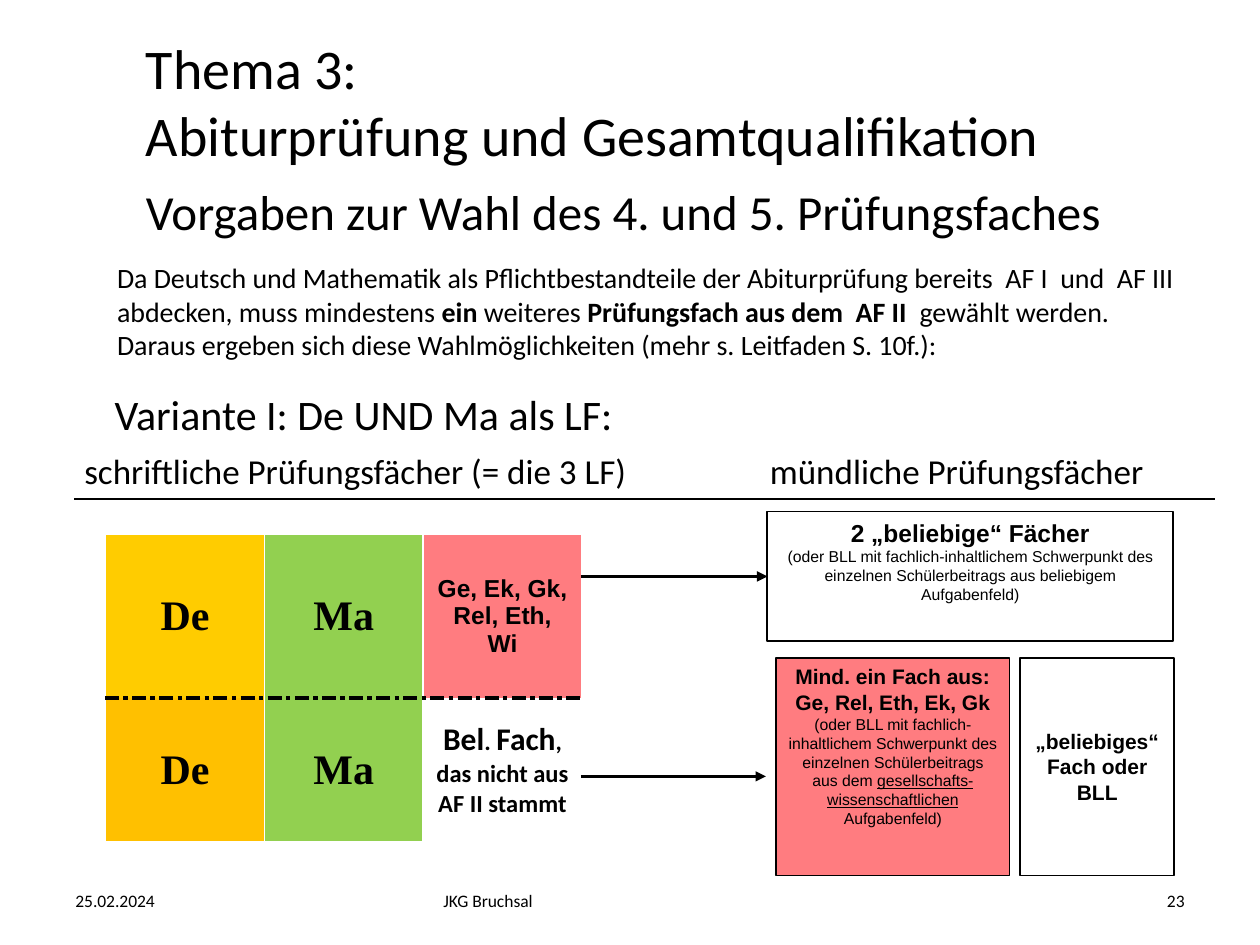
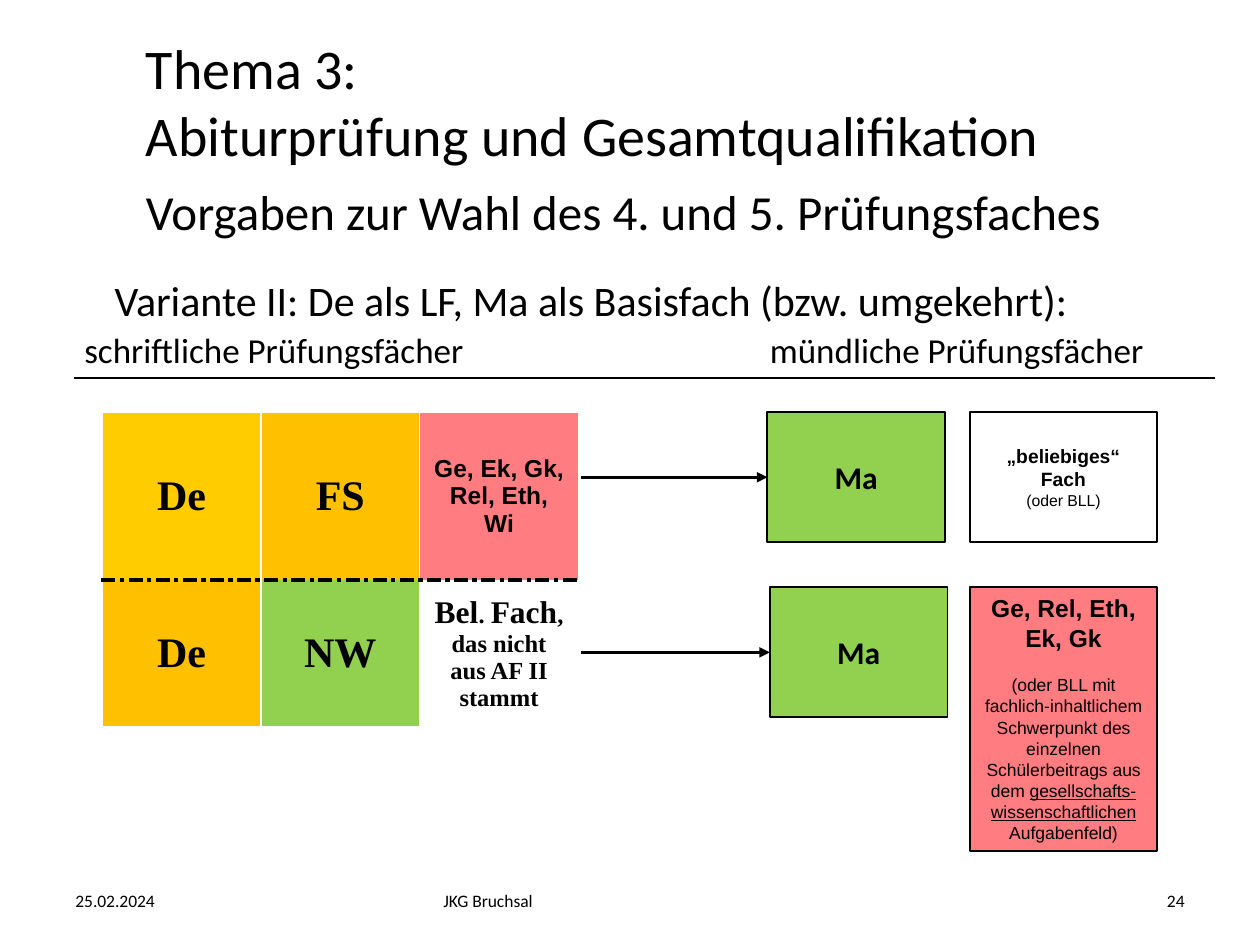
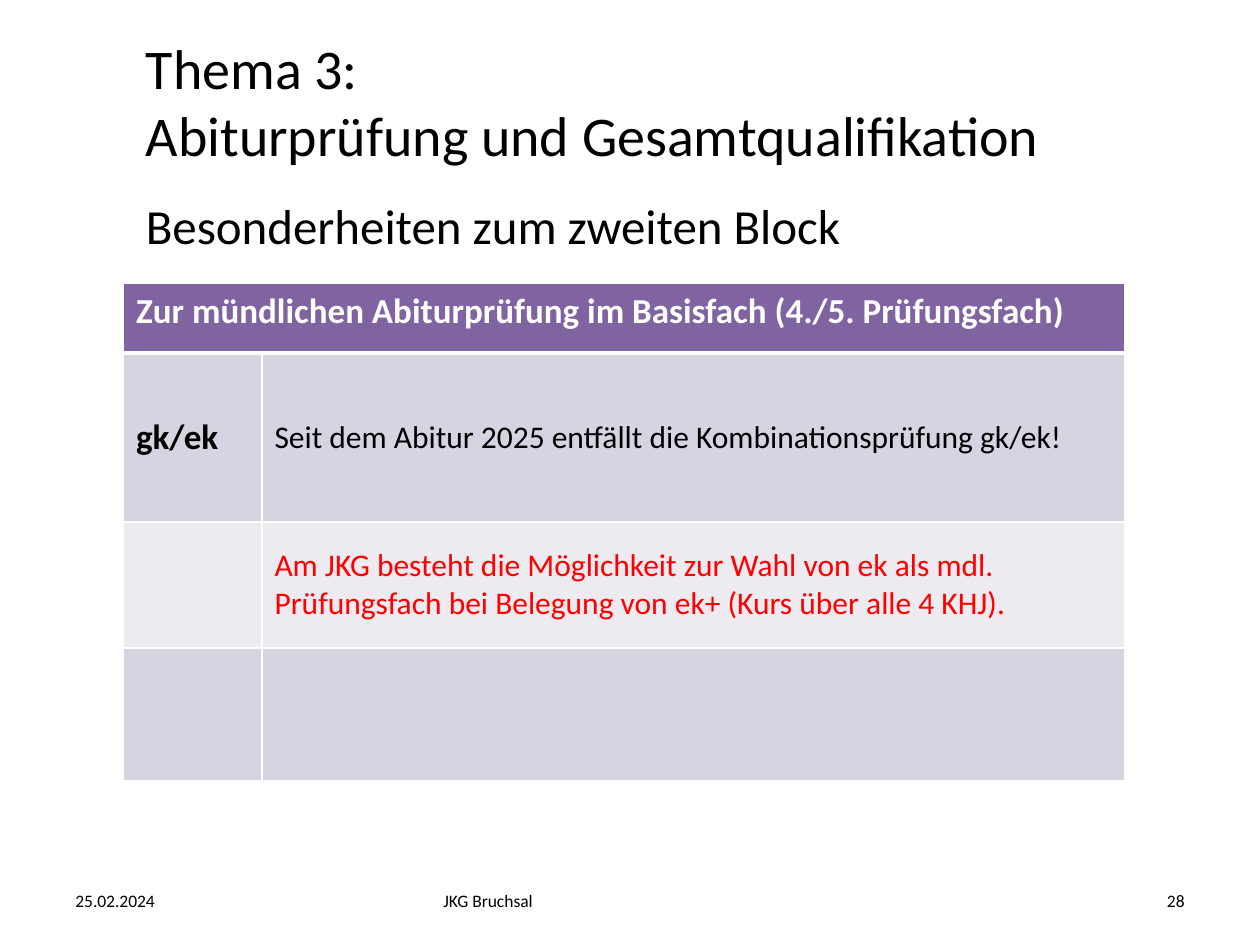
from dataclasses import dataclass

from lxml import etree
from pptx import Presentation
from pptx.dml.color import RGBColor
from pptx.enum.shapes import MSO_CONNECTOR, MSO_SHAPE
from pptx.enum.text import MSO_ANCHOR, PP_ALIGN
from pptx.oxml.ns import qn
from pptx.util import Cm, Pt

LEFT, CENTER, RIGHT = PP_ALIGN.LEFT, PP_ALIGN.CENTER, PP_ALIGN.RIGHT
TOP, MIDDLE = MSO_ANCHOR.TOP, MSO_ANCHOR.MIDDLE
RECTANGLE = MSO_SHAPE.RECTANGLE
STRAIGHT = MSO_CONNECTOR.STRAIGHT
LEFT_SIDE = 1

CALIBRI, ARIAL, TIMES = "Calibri", "Arial", "Times New Roman"
BLACK, WHITE, RED = "000000", "FFFFFF", "FF0000"
YELLOW, AMBER, GREEN, CORAL = "FFCC00", "FFC000", "92D050", "FF7C80"
PURPLE, LILAC, PALE_LILAC = "8064A2", "D8D3E0", "EDEAF0"

THEME = "Thema 3:\nAbiturprüfung und Gesamtqualifikation"
ELECTION_RULES = "Vorgaben zur Wahl des 4. und 5. Prüfungsfaches"
ORAL = "mündliche Prüfungsfächer"
DATE, SCHOOL = "25.02.2024", "JKG Bruchsal"


def color(value):
    return RGBColor.from_string(value)


@dataclass
class Run:
    text: str
    size: float
    font: str = CALIBRI
    bold: bool = False
    underline: bool = False
    color: str = BLACK


@dataclass
class Paragraph:
    runs: list
    align: int = LEFT
    before: float = 0


def line(text, size, font=CALIBRI, bold=False, align=LEFT, color=BLACK):
    return Paragraph([Run(text, size, font, bold, color=color)], align)


def centered(text, size, font=ARIAL, bold=True):
    return line(text, size, font, bold, CENTER)


def social_science_project(size, before=0):
    return Paragraph([
        Run("(oder BLL mit fachlich-inhaltlichem Schwerpunkt des einzelnen "
            "Schülerbeitrags aus dem ", size, ARIAL),
        Run("gesellschafts-wissenschaftlichen", size, ARIAL, underline=True),
        Run(" Aufgabenfeld)", size, ARIAL),
    ], CENTER, before)


def subject(name, fill):
    return fill, [centered(name, 24, TIMES)]


def social_sciences():
    return CORAL, [centered("Ge, Ek, Gk,\nRel, Eth,\nWi", 14)]


def free_subject(font):
    parts = [("Bel", 18), (". ", 14), ("Fach", 18),
             (", das nicht aus AF II stammt", 14)]
    return None, [Paragraph([Run(text, size, font, True)
                             for text, size in parts], CENTER)]


class Deck:
    def __init__(self):
        self.presentation = Presentation()
        self.presentation.slide_width = Cm(25.4)
        self.presentation.slide_height = Cm(19.05)
        self.slide = None

    def new_slide(self, number):
        self.slide = self.presentation.slides.add_slide(
            self.presentation.slide_layouts[6])
        self.text(2.69, 0.53, 21.44, 3, [line(THEME, 32)], MIDDLE)
        for left, width, content, align in (
                (1.27, 5.92, DATE, LEFT),
                (8.69, 8.05, SCHOOL, LEFT),
                (18.21, 5.92, str(number), RIGHT)):
            self.text(left, 17.65, width, 1.02,
                      [line(content, 10, align=align)], MIDDLE)

    def add_paragraphs(self, frame, paragraphs):
        for index, content in enumerate(paragraphs):
            paragraph = frame.add_paragraph() if index else frame.paragraphs[0]
            paragraph.alignment = content.align
            if content.before:
                paragraph.space_before = Pt(content.before)
            for part in content.runs:
                for row, text in enumerate(part.text.split("\n")):
                    if row:
                        paragraph.add_line_break()
                    run = paragraph.add_run()
                    run.text = text
                    run.font.size = Pt(part.size)
                    run.font.name = part.font
                    run.font.bold = part.bold
                    run.font.underline = part.underline
                    run.font.color.rgb = color(part.color)

    def text(self, left, top, width, height, paragraphs, anchor=TOP):
        frame = self.slide.shapes.add_textbox(
            Cm(left), Cm(top), Cm(width), Cm(height)).text_frame
        frame.word_wrap = True
        frame.vertical_anchor = anchor
        self.add_paragraphs(frame, paragraphs)
        return frame

    def box(self, left, top, width, height, paragraphs, fill=None, anchor=MIDDLE):
        box = self.slide.shapes.add_shape(
            RECTANGLE, Cm(left), Cm(top), Cm(width), Cm(height))
        box.shadow.inherit = False
        if fill:
            box.fill.solid()
            box.fill.fore_color.rgb = color(fill)
        else:
            box.fill.background()
        box.line.color.rgb = color(BLACK)
        box.line.width = Pt(1)
        box.text_frame.word_wrap = True
        box.text_frame.vertical_anchor = anchor
        self.add_paragraphs(box.text_frame, paragraphs)
        return box

    def rule(self, left, right, y, width=1.5):
        rule = self.slide.shapes.add_connector(
            STRAIGHT, Cm(left), y, Cm(right), y)
        rule.line.color.rgb = color(BLACK)
        rule.line.width = Pt(width)
        etree.SubElement(rule._element.spPr, qn("a:effectLst"))
        return rule

    def arrow(self, y=None, target=None):
        if target is not None:
            y = target.top + target.height // 2
        arrow = self.rule(11.71, 15.44, y, 1.75)
        etree.SubElement(arrow._element.spPr.find(qn("a:ln")),
                         qn("a:tailEnd"), type="triangle")
        if target is not None:
            arrow.end_connect(target, LEFT_SIDE)

    def variant(self, title, written, rule_y, title_gap):
        self.text(2.06, rule_y - title_gap, 21.59, 1.27, [line(title, 24)])
        frame = self.text(1.45, rule_y - 1.12, 23.01, 1.12,
                          [line(f"{written}\t{ORAL}", 20)])
        tabs = etree.SubElement(frame.paragraphs[0]._p.get_or_add_pPr(),
                                qn("a:tabLst"))
        etree.SubElement(tabs, qn("a:tab"), pos=str(Cm(13.82)), algn="l")
        self.rule(1.5, 24.49, Cm(rule_y))

    def border(self, cell, side, stroke, width, dash="solid"):
        properties = cell._tc.get_or_add_tcPr()
        edge = etree.Element(qn(f"a:ln{side}"), w=str(Pt(width)))
        paint = etree.SubElement(edge, qn("a:solidFill"))
        etree.SubElement(paint, qn("a:srgbClr"), val=stroke)
        etree.SubElement(edge, qn("a:prstDash"), val=dash)
        properties.insert("LRTB".index(side), edge)

    def table(self, left, top, widths, heights, rows, divider, top_row_anchor=MIDDLE):
        table = self.slide.shapes.add_table(
            len(heights), len(widths), Cm(left), Cm(top),
            Cm(sum(widths)), Cm(sum(heights))).table
        table.first_row = table.horz_banding = False
        for column, width in zip(table.columns, widths):
            column.width = Cm(width)
        for y, (height, row) in enumerate(zip(heights, rows)):
            table.rows[y].height = Cm(height)
            for x, (fill, paragraphs) in enumerate(row):
                cell = table.cell(y, x)
                cell.vertical_anchor = MIDDLE if y else top_row_anchor
                if fill:
                    cell.fill.solid()
                    cell.fill.fore_color.rgb = color(fill)
                else:
                    cell.fill.background()
                self.add_paragraphs(cell.text_frame, paragraphs)
                thin = (WHITE, 1)
                edges = {"L": thin, "R": thin,
                         "T": divider if y == 1 else thin,
                         "B": divider if y == 0 else thin}
                for side, stroke in edges.items():
                    self.border(cell, side, *stroke)
        return table

    def subject_table(self, left, top, heights, rows):
        self.table(left, top, [3.2] * 3, heights, rows,
                   (BLACK, 2.25, "sysDashDot"))


def both_advanced(deck):
    deck.new_slide(23)
    deck.text(2.69, 3.53, 20.62, 2.03, [line(ELECTION_RULES, 28)])
    deck.text(2.11, 5.13, 22.33, 2.57, [Paragraph([
        Run("Da Deutsch und Mathematik als Pflichtbestandteile der Abiturprüfung "
            "bereits  AF I  und  AF III abdecken, muss mindestens ", 16),
        Run("ein", 16, bold=True),
        Run(" weiteres", 16),
        Run(" Prüfungsfach aus dem  AF II  ", 16, bold=True),
        Run("gewählt werden.\nDaraus ergeben sich diese Wahlmöglichkeiten "
            "(mehr s. Leitfaden S. 10f.):", 16),
    ])])
    deck.variant("Variante I: De UND Ma als LF:",
                 "schriftliche Prüfungsfächer (= die 3 LF)", 10.06, 2.36)
    deck.subject_table(2.13, 10.77, [3.3, 2.9], [
        [subject("De", YELLOW), subject("Ma", GREEN), social_sciences()],
        [subject("De", AMBER), subject("Ma", GREEN), free_subject(CALIBRI)],
    ])
    any_two = deck.box(15.47, 10.31, 8.18, 2.62, [
        centered("2 „beliebige“ Fächer", 14),
        centered("(oder BLL mit fachlich-inhaltlichem Schwerpunkt des einzelnen "
                 "Schülerbeitrags aus beliebigem Aufgabenfeld)", 9, bold=False),
    ], anchor=TOP)
    deck.box(15.65, 13.26, 4.7, 4.39, [
        centered("Mind. ein Fach aus:", 12),
        centered("Ge, Rel, Eth, Ek, Gk", 12),
        social_science_project(9),
    ], CORAL, TOP)
    deck.box(20.57, 13.26, 3.1, 4.39,
             [centered("„beliebiges“ Fach oder BLL", 12)])
    deck.arrow(target=any_two)
    deck.arrow(Cm(15.65))


def one_basic(deck):
    deck.new_slide(24)
    deck.text(2.69, 3.53, 20.62, 2.03, [line(ELECTION_RULES, 28)])
    deck.variant("Variante II: De als LF, Ma als Basisfach (bzw. umgekehrt):",
                 "schriftliche Prüfungsfächer", 7.62, 2.21)
    deck.subject_table(2.06, 8.31, [3.38, 2.97], [
        [subject("De", YELLOW), subject("FS", AMBER), social_sciences()],
        [subject("De", AMBER), subject("NW", GREEN), free_subject(TIMES)],
    ])
    for left, top in ((15.47, 8.31), (15.52, 11.84)):
        maths = deck.box(left, top, 3.58, 2.62,
                         [centered("Ma", 18, CALIBRI)], GREEN)
        deck.arrow(target=maths)
    deck.box(19.56, 8.31, 3.76, 2.62, [
        centered("„beliebiges“ Fach", 11),
        centered("(oder BLL)", 9, bold=False),
    ])
    deck.box(19.56, 11.84, 3.76, 5.31, [
        centered("Ge, Rel, Eth, Ek, Gk", 14),
        social_science_project(10, before=12.65),
    ], CORAL, TOP)


def second_block(deck):
    deck.new_slide(28)
    deck.text(2.69, 3.53, 21.44, 2,
              [line("Besonderheiten zum zweiten Block", 28)], MIDDLE)
    heading = line("Zur mündlichen Abiturprüfung im Basisfach (4./5. Prüfungsfach)",
                   20, bold=True, color=WHITE)
    abolished = line("Seit dem Abitur 2025 entfällt die Kombinationsprüfung gk/ek!",
                     18)
    option = line("Am JKG besteht die Möglichkeit zur Wahl von ek als mdl. "
                  "Prüfungsfach bei Belegung von ek+ (Kurs über alle 4 KHJ).",
                  18, color=RED)
    oral_exam = deck.table(2.49, 5.72, [2.79, 17.4], [1.4, 3.4, 2.54, 2.67], [
        [(PURPLE, [heading]), (PURPLE, [])],
        [(LILAC, [line("gk/ek", 20, bold=True)]), (LILAC, [abolished])],
        [(PALE_LILAC, []), (PALE_LILAC, [option])],
        [(LILAC, []), (LILAC, [])],
    ], (WHITE, 3), TOP)
    oral_exam.cell(0, 0).merge(oral_exam.cell(0, 1))


def main():
    deck = Deck()
    both_advanced(deck)
    one_basic(deck)
    second_block(deck)
    deck.presentation.save("out.pptx")


if __name__ == "__main__":
    main()
